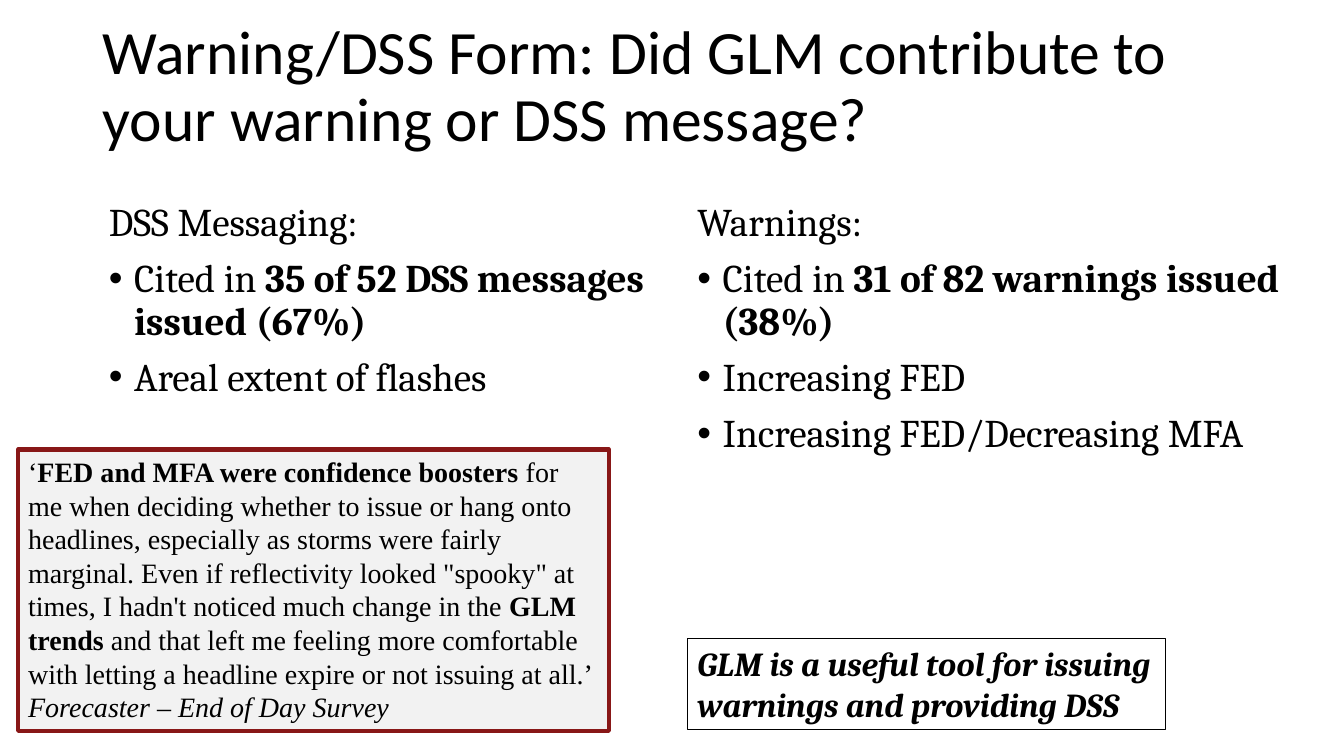
from dataclasses import dataclass

from lxml import etree
from pptx import Presentation
from pptx.dml.color import RGBColor
from pptx.enum.shapes import MSO_SHAPE
from pptx.enum.text import MSO_ANCHOR, MSO_AUTO_SIZE, PP_ALIGN
from pptx.oxml.ns import qn
from pptx.util import Pt

RECTANGLE = MSO_SHAPE.RECTANGLE
MIDDLE, TOP = MSO_ANCHOR.MIDDLE, MSO_ANCHOR.TOP
LEFT = PP_ALIGN.LEFT
NO_AUTOFIT = MSO_AUTO_SIZE.NONE


@dataclass(frozen=True)
class Theme:
    """Colours, fonts, and type sizes of the slide."""
    ink: RGBColor = RGBColor(0, 0, 0)
    paper: RGBColor = RGBColor(255, 255, 255)
    quote_fill: RGBColor = RGBColor(0xF2, 0xF2, 0xF2)
    quote_line: RGBColor = RGBColor(0x88, 0x17, 0x17)
    title_font: str = "Calibri"
    body_font: str = "Cambria"
    quote_font: str = "Times New Roman"
    title_size: int = 44
    body_size: int = 28
    takeaway_size: int = 24
    quote_size: int = 20


THEME = Theme()
BULLET_INDENT = Pt(18)
COLUMN_TOP, COLUMN_HEIGHT = 141.1, 314.7
RIGHT_EDGE = 491

TITLE = "Warning/DSS Form: Did GLM contribute to your warning or DSS message?"
MESSAGING = [
    [("DSS Messaging:", {})],
    [("Cited in ", {}), ("35 of 52 DSS messages issued (67%)", {"bold": True})],
    [("Areal extent of flashes", {})],
]
WARNINGS = [
    [("Warnings:", {})],
    [("Cited in ", {}), ("31 of 82 warnings issued (38%)", {"bold": True})],
    [("Increasing FED", {})],
    [("Increasing FED/Decreasing MFA", {})],
]
TAKEAWAY = [[("GLM is a useful tool for issuing warnings and providing DSS",
              {"bold": True, "italic": True})]]
QUOTE = [
    [("‘", {}),
     ("FED and MFA were confidence boosters", {"bold": True}),
     (" for me when deciding whether to issue or hang onto headlines, especially "
      "as storms were fairly marginal. Even if reflectivity looked \"spooky\" at "
      "times, I hadn't noticed much change in the ", {}),
     ("GLM trends ", {"bold": True}),
     ("and that left me feeling more comfortable with letting a headline expire "
      "or not issuing at all.’", {})],
    [("Forecaster – End of Day Survey", {"italic": True})],
]


def apply(target, formats):
    """Set each format value on the target."""
    for key, value in formats.items():
        setattr(target, key, value)


def place(part, box):
    """Move a part to a box of left, top, width and height in points."""
    apply(part, dict(zip(("left", "top", "width", "height"), map(Pt, box))))


def write(part, paragraphs, font, size, anchor=TOP, **spacing):
    """Fill a part with left-aligned paragraphs of formatted runs."""
    frame = part.text_frame
    apply(frame, {"word_wrap": True, "auto_size": NO_AUTOFIT, "vertical_anchor": anchor})
    for index, runs in enumerate(paragraphs):
        paragraph = frame.paragraphs[0] if index == 0 else frame.add_paragraph()
        apply(paragraph, {"alignment": LEFT, "space_before": Pt(0), **spacing})
        for text, emphasis in runs:
            run = paragraph.add_run()
            run.text = text
            apply(run.font, {"name": font, "size": Pt(size), "bold": False, **emphasis})
            run.font.color.rgb = THEME.ink


def set_bullet(paragraph, bulleted):
    """Give a paragraph a hanging bullet, or clear its bullet and indent."""
    properties = paragraph._p.get_or_add_pPr()
    indent = BULLET_INDENT if bulleted else 0
    properties.set("marL", str(indent))
    properties.set("indent", str(-indent))
    if bulleted:
        etree.SubElement(properties, qn("a:buFont")).set("typeface", "Arial")
        etree.SubElement(properties, qn("a:buChar")).set("char", "•")
    else:
        etree.SubElement(properties, qn("a:buNone"))


def add_title(slide, box):
    """Fill the title placeholder."""
    place(slide.shapes.title, box)
    write(slide.shapes.title, [[(TITLE, {})]], THEME.title_font, THEME.title_size,
          MIDDLE, line_spacing=0.9)


def add_column(column, box, paragraphs):
    """Fill a body placeholder with a plain heading over bulleted findings."""
    place(column, box)
    write(column, paragraphs, THEME.body_font, THEME.body_size, line_spacing=0.9)
    for index, paragraph in enumerate(column.text_frame.paragraphs):
        set_bullet(paragraph, index > 0)
        if index:
            paragraph.space_before = Pt(10)


def add_panel(slide, box, paragraphs, font, size, fill, line, line_width):
    """Add an outlined rectangle holding text."""
    panel = slide.shapes.add_shape(RECTANGLE, *map(Pt, box))
    panel.shadow.inherit = False
    panel.fill.solid()
    panel.fill.fore_color.rgb = fill
    panel.line.color.rgb = line
    panel.line.width = Pt(line_width)
    write(panel, paragraphs, font, size)


def main():
    """Build and save the slide."""
    deck = Presentation()
    apply(deck, {"slide_width": Pt(960), "slide_height": Pt(540)})
    slide = deck.slides.add_slide(deck.slide_layouts[3])
    add_title(slide, (66.2, 10.8, 828, 104.4))
    add_column(slide.placeholders[1], (70.6, COLUMN_TOP, 408.2, COLUMN_HEIGHT), MESSAGING)
    add_column(slide.placeholders[2], (RIGHT_EDGE, COLUMN_TOP, 439.2, COLUMN_HEIGHT), WARNINGS)
    add_panel(slide, (RIGHT_EDGE, COLUMN_TOP + COLUMN_HEIGHT, 341.3, 65.5), TAKEAWAY,
              THEME.body_font, THEME.takeaway_size, THEME.paper, THEME.ink, 0.75)
    add_panel(slide, (13, 321.1, 421.9, 200.9), QUOTE, THEME.quote_font,
              THEME.quote_size, THEME.quote_fill, THEME.quote_line, 3)
    deck.save("out.pptx")


if __name__ == "__main__":
    main()
